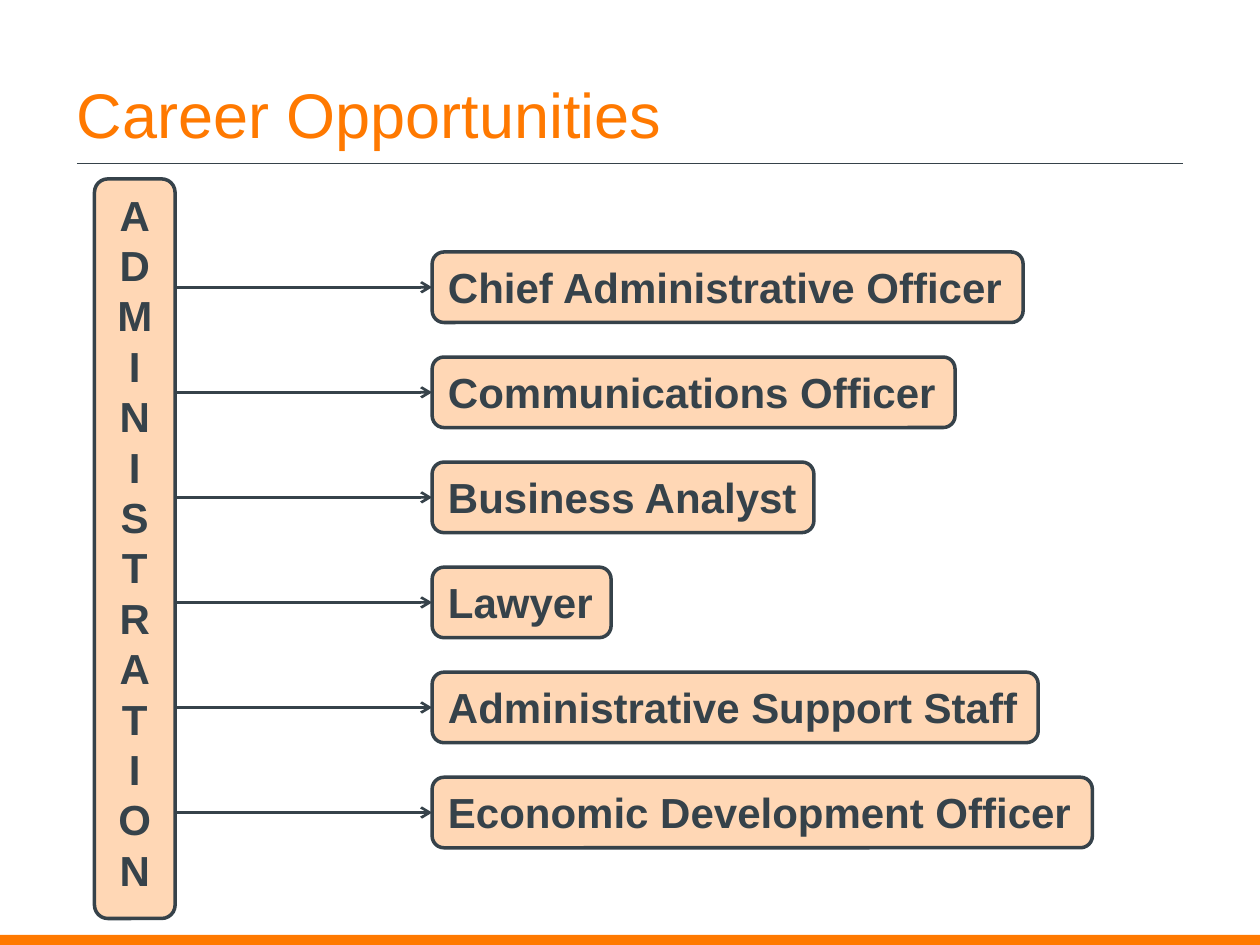
from lxml import etree
from pptx import Presentation
from pptx import util as u
from pptx.dml.color import RGBColor
from pptx.enum import shapes, text
from pptx.oxml.ns import qn

WIDTH, HEIGHT = 10, 7.5
ORANGE, PEACH, SLATE = "FF7900", "FFD7B5", "36424A"
LABEL = {"name": "Arial", "size": u.Pt(24), "bold": True}
TITLE = {"name": "Arial", "size": u.Pt(36), "bold": False}

ROLES = [
    ("Chief Administrative Officer", 4.69),
    ("Communications Officer", 4.15),
    ("Business Analyst", 3.03),
    ("Lawyer", 1.42),
    ("Administrative Support Staff", 4.81),
    ("Economic Development Officer", 5.24),
]


def rgb(value):
    return RGBColor.from_string(value)


def inches(*values):
    return [u.Inches(v) for v in values]


def write(p, words, style, color):
    r = p.add_run()
    r.text = words
    for key, value in style.items():
        setattr(r.font, key, value)
    r.font.color.rgb = rgb(color)


def add_line(s, start, end, weight, arrow=False):
    line = s.shapes.add_connector(
        shapes.MSO_CONNECTOR.STRAIGHT, *inches(*start, *end))
    line.line.color.rgb = rgb(SLATE)
    line.line.width = u.Pt(weight)
    if arrow:
        etree.SubElement(line.line._get_or_add_ln(), qn("a:tailEnd"), type="arrow")
    etree.SubElement(line._element.spPr, qn("a:effectLst"))
    return line


def add_label(s, box, lines, align, wrap):
    """Rounded, outlined box with one paragraph for each line."""
    sp = s.shapes.add_shape(shapes.MSO_SHAPE.ROUNDED_RECTANGLE, *inches(*box))
    sp.shadow.inherit = False
    sp.fill.solid()
    sp.fill.fore_color.rgb = rgb(PEACH)
    sp.line.color.rgb = rgb(SLATE)
    sp.line.width = u.Pt(2)
    tf = sp.text_frame
    tf.word_wrap = wrap
    tf.auto_size = text.MSO_AUTO_SIZE.SHAPE_TO_FIT_TEXT
    tf.vertical_anchor = text.MSO_ANCHOR.TOP
    for i, words in enumerate(lines):
        p = tf.add_paragraph() if i else tf.paragraphs[0]
        p.alignment = align
        write(p, words, LABEL, SLATE)
    return sp


def add_footer_band(s, box):
    sp = s.shapes.add_shape(shapes.MSO_SHAPE.RECTANGLE, *inches(*box))
    sp.shadow.inherit = False
    sp.fill.solid()
    sp.fill.fore_color.rgb = rgb(ORANGE)
    sp.line.fill.background()


def add_title(s, box, words):
    """Title at the bottom of its box, with a rule below it."""
    left, top, width, height = box
    tf = s.shapes.add_textbox(*inches(*box)).text_frame
    tf.word_wrap = True
    tf.vertical_anchor = text.MSO_ANCHOR.BOTTOM
    write(tf.paragraphs[0], words, TITLE, ORANGE)
    rule = top + height + 0.05
    add_line(s, (left + 0.1, rule), (WIDTH - left - 0.1, rule), 0.75)


def add_department(s, box, name, roles):
    """Tall bar with the name, and an arrow from it to each role."""
    left, top, width, height = box
    bar_width, role_height = 0.64, 0.56
    add_label(s, (left, top, bar_width, height), name, text.PP_ALIGN.CENTER, True)
    bar_edge, role_left = left + bar_width, left + 2.68
    first, pitch = top + 0.58, height / 7.04
    for i, (role, role_width) in enumerate(roles):
        y = first + i * pitch
        sp = add_label(s, (role_left, y, role_width, role_height),
                       [role], text.PP_ALIGN.LEFT, False)
        middle = y + role_height / 2
        arrow = add_line(s, (bar_edge, middle), (role_left, middle), 1.5, arrow=True)
        arrow.end_connect(sp, 1)


def main():
    prs = Presentation()
    prs.slide_width, prs.slide_height = inches(WIDTH, HEIGHT)
    s = prs.slides.add_slide(prs.slide_layouts[6])
    add_footer_band(s, (0, HEIGHT - 0.08, WIDTH, 0.08))
    add_title(s, (0.51, 0.25, 8.99, 1), "Career Opportunities")
    add_department(s, (0.75, 1.42, 7.91, 5.87), "ADMINISTRATION", ROLES)
    prs.save("out.pptx")


if __name__ == "__main__":
    main()
